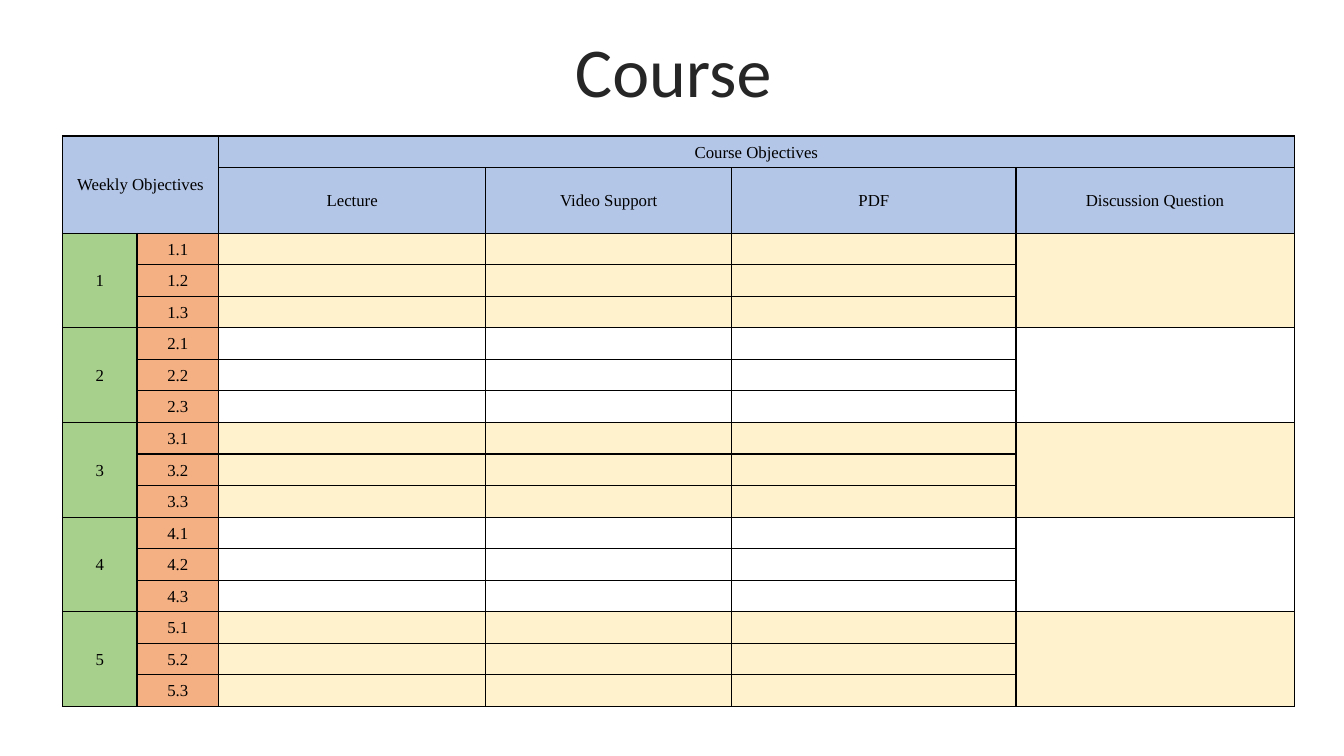
from lxml import etree
from pptx import Presentation
from pptx.dml.color import RGBColor
from pptx.enum.text import MSO_ANCHOR, PP_ALIGN
from pptx.oxml.ns import qn
from pptx.util import Pt

PX = 3048  # EMU per px, 300 px to the inch
CENTER, MIDDLE = PP_ALIGN.CENTER, MSO_ANCHOR.MIDDLE

BLACK = RGBColor(0x00, 0x00, 0x00)
GREY = RGBColor(0x26, 0x26, 0x26)
BLUE = RGBColor(0xB4, 0xC6, 0xE7)
GREEN = RGBColor(0xA8, 0xD0, 0x8D)
ORANGE = RGBColor(0xF4, 0xB0, 0x83)
CREAM = RGBColor(0xFF, 0xF2, 0xCC)

COLS = [222, 243, 795, 732, 846, 828]
HEADS = ["Lecture", "Video Support", "PDF", "Discussion Question"]
ROW, HEAD_ROW = 94, 195
WEEKS, GOALS = 5, 3

TITLE = {"para": {"alignment": CENTER, "line_spacing": 0.8},
         "font": {"name": "Calibri", "size": Pt(50)}, "color": GREY}
LABEL = {"para": {"alignment": CENTER, "line_spacing": 1.07,
                  "space_after": Pt(8)},
         "font": {"name": "Times New Roman", "size": Pt(12)}, "color": BLACK}
CELL = {"vertical_anchor": MIDDLE, "margin_left": 21 * PX,
        "margin_right": 21 * PX, "margin_top": 0, "margin_bottom": 0}


def apply(item, values):
    for name, value in values.items():
        setattr(item, name, value)


def write(frame, text, style):
    para = frame.paragraphs[0]
    apply(para, style["para"])
    run = para.add_run()
    run.text = text
    apply(run.font, style["font"])
    run.font.color.rgb = style["color"]


def add_title(slide, text):
    box = slide.shapes.add_textbox(*[n * PX for n in (105, 111, 3798, 237)])
    apply(box.text_frame, {"word_wrap": True, "vertical_anchor": MIDDLE})
    write(box.text_frame, text, TITLE)


def edge(cell):
    props = cell._tc.get_or_add_tcPr()
    for side in ("a:lnL", "a:lnR", "a:lnT", "a:lnB"):
        line = etree.SubElement(props, qn(side), w=str(Pt(1)))
        fill = etree.SubElement(line, qn("a:solidFill"))
        etree.SubElement(fill, qn("a:srgbClr"), val=str(BLACK))


def add_grid(slide):
    rows = [ROW, HEAD_ROW] + [ROW] * (WEEKS * GOALS)
    place = (186, 405, sum(COLS), sum(rows))
    table = slide.shapes.add_table(
        len(rows), len(COLS), *[n * PX for n in place]).table
    apply(table, {"first_row": False, "horz_banding": False})
    for col, width in zip(table.columns, COLS):
        col.width = width * PX
    for row, height in zip(table.rows, rows):
        row.height = height * PX
    for cell in table.iter_cells():
        apply(cell, CELL)
        edge(cell)
        cell.fill.background()
    return table


def fill_cell(cell, color, text=""):
    cell.fill.solid()
    cell.fill.fore_color.rgb = color
    if text:
        write(cell.text_frame, text, LABEL)


def add_heads(table):
    for row in range(2):
        for col in range(len(COLS)):
            fill_cell(table.cell(row, col), BLUE)
    write(table.cell(0, 0).text_frame, "Weekly Objectives", LABEL)
    write(table.cell(0, 2).text_frame, "Course Objectives", LABEL)
    for col, head in enumerate(HEADS, 2):
        write(table.cell(1, col).text_frame, head, LABEL)
    table.cell(0, 0).merge(table.cell(1, 1))
    table.cell(0, 2).merge(table.cell(0, 5))


def add_week(table, week):
    top = 2 + (week - 1) * GOALS
    for goal in range(GOALS):
        row = top + goal
        fill_cell(table.cell(row, 0), GREEN, "" if goal else str(week))
        fill_cell(table.cell(row, 1), ORANGE, f"{week}.{goal + 1}")
        if week % 2:
            for col in range(2, len(COLS)):
                fill_cell(table.cell(row, col), CREAM)
    for col in (0, 5):
        table.cell(top, col).merge(table.cell(top + GOALS - 1, col))


def main():
    deck = Presentation()
    deck.slide_width, deck.slide_height = 4000 * PX, 2250 * PX
    slide = deck.slides.add_slide(deck.slide_layouts[6])

    # Title
    add_title(slide, "Course")

    # Objectives table
    table = add_grid(slide)
    add_heads(table)
    for week in range(1, WEEKS + 1):
        add_week(table, week)

    deck.save("out.pptx")


if __name__ == "__main__":
    main()
